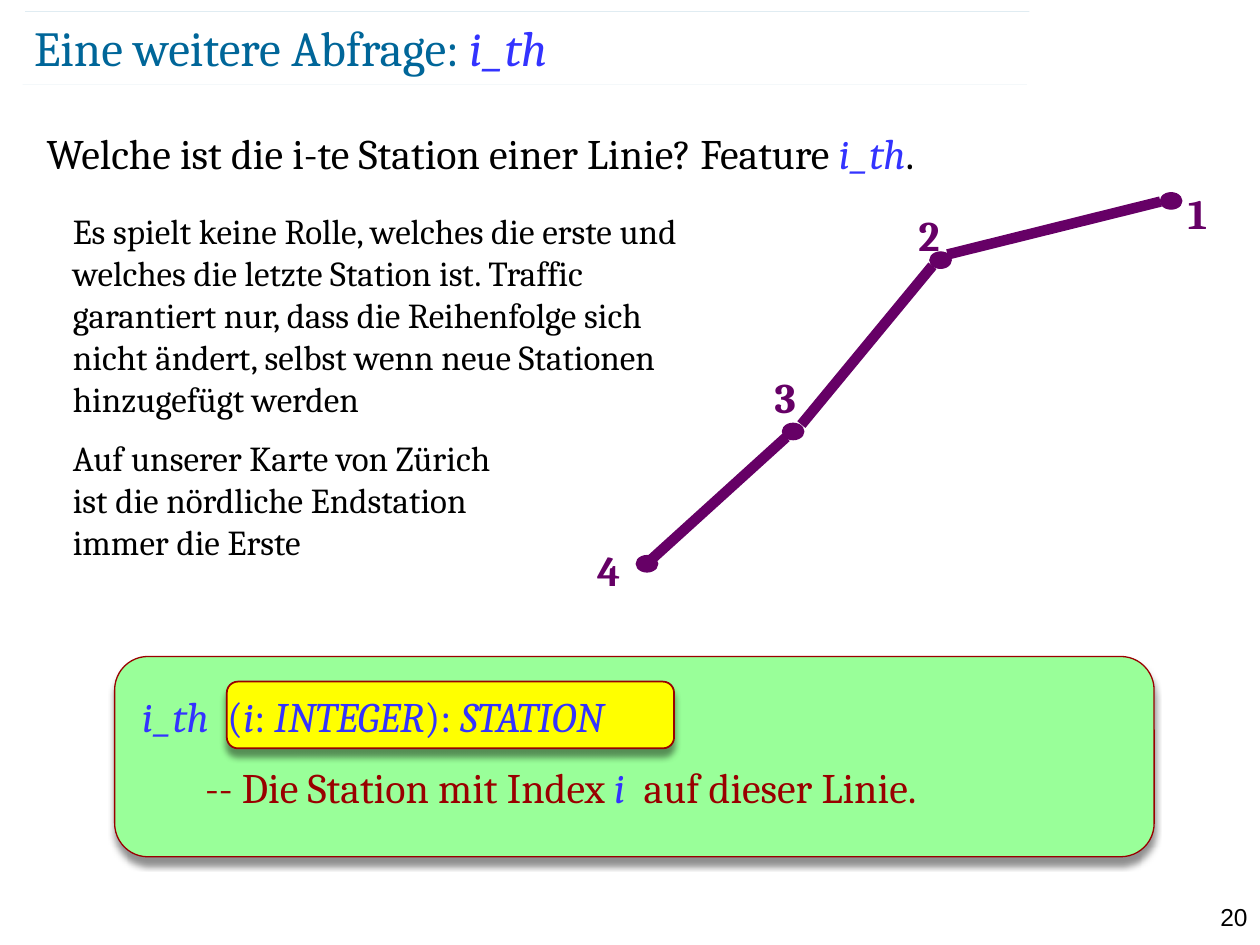
from lxml import etree
from pptx import Presentation
from pptx.dml.color import RGBColor
from pptx.enum.shapes import MSO_CONNECTOR, MSO_SHAPE
from pptx.enum.text import MSO_ANCHOR, MSO_AUTO_SIZE, PP_ALIGN
from pptx.oxml.ns import qn
from pptx.util import Inches, Pt

OVAL, ROUNDED = MSO_SHAPE.OVAL, MSO_SHAPE.ROUNDED_RECTANGLE
STRAIGHT = MSO_CONNECTOR.STRAIGHT
LEFT, RIGHT = PP_ALIGN.LEFT, PP_ALIGN.RIGHT
TOP, MIDDLE = MSO_ANCHOR.TOP, MSO_ANCHOR.MIDDLE
NO_FIT = MSO_AUTO_SIZE.NONE

TEAL, BLUE, BLACK = "006699", "3333FF", "000000"
PURPLE, RED, GREEN, YELLOW = "660066", "990000", "99FF99", "FFFF00"
COLUMNS, ROWS = 100, 75


def rgb(value):
    return RGBColor.from_string(value)


class Deck:
    font = "Cambria"

    def __init__(self):
        self.prs = Presentation()
        self.prs.slide_width, self.prs.slide_height = Inches(10), Inches(7.5)
        self.s = None

    def new_slide(self):
        self.s = self.prs.slides.add_slide(self.prs.slide_layouts[1])

    def x(self, columns):
        return round(self.prs.slide_width * columns / COLUMNS)

    def y(self, rows):
        return round(self.prs.slide_height * rows / ROWS)

    def box(self, left, top, width, height):
        return self.x(left), self.y(top), self.x(width), self.y(height)

    def fill_text(self, tf, paragraphs, size, color, bold=False, align=LEFT, font=None):
        for i, runs in enumerate(paragraphs):
            p = tf.paragraphs[0] if i == 0 else tf.add_paragraph()
            p.alignment = align
            p.space_before = Pt(size / 2 if i else 0)
            for text, run_color, slanted in runs:
                for n, line in enumerate(text.split("\n")):
                    if n:
                        p.add_line_break()
                    r = p.add_run()
                    r.text = line
                    r.font.name, r.font.size = font or self.font, Pt(size)
                    r.font.bold, r.font.italic = bold, slanted
                    r.font.color.rgb = rgb(run_color or color)

    def text(self, at, paragraphs, size, color, wrap=True, **style):
        tf = self.s.shapes.add_textbox(*self.box(*at)).text_frame
        tf.word_wrap = wrap
        self.fill_text(tf, paragraphs, size, color, **style)

    def placeholder(self, sp, at, runs, size, color, anchor, inset=None):
        sp.left, sp.top, sp.width, sp.height = self.box(*at)
        tf = sp.text_frame
        tf.auto_size, tf.vertical_anchor = NO_FIT, anchor
        if inset is not None:
            tf.margin_left = tf.margin_right = tf.margin_top = tf.margin_bottom = inset
        pPr = tf.paragraphs[0]._p.get_or_add_pPr()
        pPr.set("marL", "0")
        pPr.set("indent", "0")
        etree.SubElement(pPr, qn("a:buNone"))
        self.fill_text(tf, [runs], size, color)

    def title(self, at, runs):
        self.placeholder(self.s.shapes.title, at, runs, 28, TEAL, MIDDLE, 0)

    def body(self, at, runs):
        self.placeholder(self.s.placeholders[1], at, runs, 24, BLACK, TOP)

    def shape(self, kind, at, fill, line, weight=0.75, shadow=False):
        sp = self.s.shapes.add_shape(kind, *self.box(*at))
        sp.fill.solid()
        sp.fill.fore_color.rgb = rgb(fill)
        sp.line.color.rgb, sp.line.width = rgb(line), Pt(weight)
        sp.shadow.inherit = False
        if shadow:
            effects = sp._element.spPr.find(qn("a:effectLst"))
            outer = etree.SubElement(effects, qn("a:outerShdw"), blurRad=str(Pt(4)),
                                     dist=str(Pt(4)), dir="5400000", rotWithShape="0")
            black = etree.SubElement(outer, qn("a:srgbClr"), val=BLACK)
            etree.SubElement(black, qn("a:alpha"), val="43000")

    def line(self, start, end, color, weight, opacity=100):
        c = self.s.shapes.add_connector(STRAIGHT, self.x(start[0]), self.y(start[1]),
                                        self.x(end[0]), self.y(end[1]))
        c.line.color.rgb, c.line.width = rgb(color), Pt(weight)
        spPr = c._element.spPr
        if opacity < 100:
            etree.SubElement(spPr.find(".//" + qn("a:srgbClr")), qn("a:alpha"),
                             val=str(opacity * 1000))
        etree.SubElement(spPr, qn("a:effectLst"))


def plain(text, color=None):
    return text, color, False


def italic(text, color=None):
    return text, color, True


def main():
    deck = Deck()
    deck.new_slide()
    for left, top in ((1.8, 6.7), (2, 0.9)):
        deck.line((left, top), (left + 79.7, top), TEAL, 0.1, opacity=35)
    deck.text((90, 71.1, 10, 3.4), [[plain("20")]], 14, BLACK, align=RIGHT, font="Arial")

    deck.title((2.7, 1.3, 86.9, 4.8),
               [plain("Eine weitere Abfrage: "), italic("i_th", BLUE)])
    deck.body((2.7, 9.6, 94, 61.7),
              [plain("Welche ist die i-te Station einer Linie? Feature "),
               italic("i_th", BLUE), plain(".")])

    tracks = [((51.7, 44.4), (62.4, 34.7)),
              ((63.6, 33.7), (74, 21.1)),
              ((75.2, 20.2), (92.1, 16))]
    for start, end in tracks:
        deck.line(start, end, PURPLE, 6)
    stations = [("4", (50.5, 44.1), (46.4, 42.7)),
                ("3", (62.1, 33.6), (60.5, 29)),
                ("2", (73.8, 20), (71.9, 16.1)),
                ("1", (92.1, 15.3), (93.3, 14.4))]
    for number, dot, label in stations:
        deck.shape(OVAL, (*dot, 1.7, 1.3), PURPLE, PURPLE)
        deck.text((*label, 3.6, 5), [[plain(number)]], 24, PURPLE, wrap=False, bold=True)

    deck.text((4.8, 16.1, 52.4, 29.6), [
        [plain("Es spielt keine Rolle, welches die erste und welches die letzte "
               "Station ist. Traffic garantiert nur, dass die Reihenfolge sich nicht "
               "ändert, selbst wenn neue Stationen hinzugefügt werden")],
        [plain("Auf unserer Karte von Zürich\nist die nördliche Endstation\n"
               "immer die Erste")],
    ], 20, BLACK)

    deck.shape(ROUNDED, (9.1, 52.1, 82.5, 15.9), GREEN, RED, shadow=True)
    deck.shape(ROUNDED, (18, 54.1, 35.5, 5.3), YELLOW, RED, 1, shadow=True)
    deck.text((10.3, 54.3, 79.4, 11.1), [
        [italic("i_th"), plain("  ("), italic("i"), plain(": "),
         italic("INTEGER"), plain("): "), italic("STATION")],
        [plain("\t-- Die Station mit Index ", RED), italic("i "),
         plain(" auf dieser Linie.", RED)],
    ], 24, BLUE)

    deck.prs.save("out.pptx")


if __name__ == "__main__":
    main()
